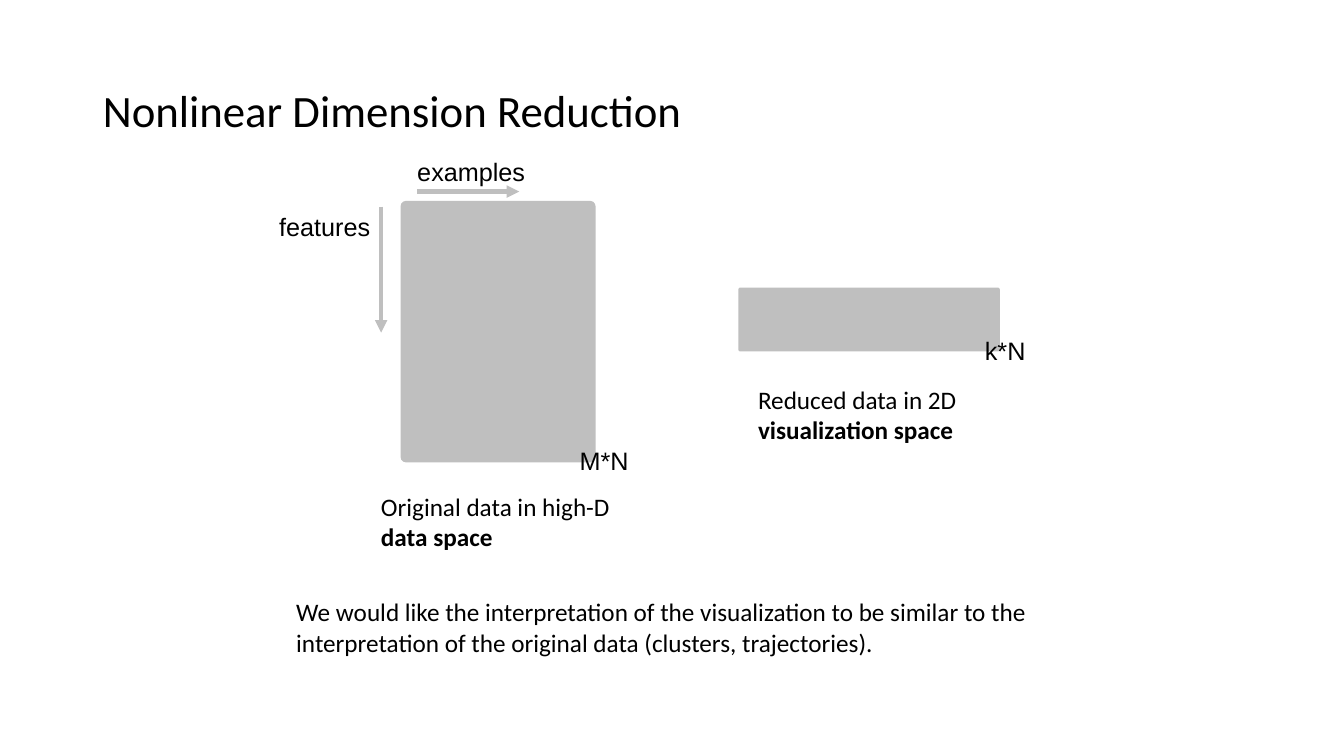
from lxml.etree import SubElement
from pptx import Presentation
from pptx.dml.color import RGBColor
from pptx.enum.shapes import MSO_CONNECTOR, MSO_SHAPE
from pptx.enum.text import MSO_ANCHOR, PP_ALIGN
from pptx.oxml.ns import qn
from pptx.util import Inches, Pt

COLORS = {"text": "000000", "matrix": "BFBFBF"}


def format_run(run, font_name, size, bold=False):
    run.font.name = font_name
    run.font.size = Pt(size)
    run.font.bold = bold
    run.font.color.rgb = RGBColor.from_string(COLORS["text"])


def add_label(left, top, width, height, text, font_name, bold_text="", wrap=True):
    label = slide.shapes.add_textbox(Inches(left), Inches(top), Inches(width), Inches(height))
    label.text_frame.word_wrap = wrap
    paragraph = label.text_frame.paragraphs[0]
    paragraph.text = text
    format_run(paragraph.runs[0], font_name, 18)
    if bold_text:
        emphasis = paragraph.add_run()
        emphasis.text = bold_text
        format_run(emphasis, font_name, 18, bold=True)


presentation = Presentation()
presentation.slide_width = Inches(13.33)
presentation.slide_height = Inches(7.5)
slide = presentation.slides.add_slide(presentation.slide_layouts[5])

title = slide.shapes.title
title.left, title.top = Inches(0.92), Inches(0.4)
title.width, title.height = Inches(11.5), Inches(1.45)
title.text_frame.text = "Nonlinear Dimension Reduction"
title.text_frame.vertical_anchor = MSO_ANCHOR.MIDDLE
heading = title.text_frame.paragraphs[0]
heading.alignment = PP_ALIGN.LEFT
heading.line_spacing = 0.9
format_run(heading.runs[0], "Calibri", 32)

matrix_color = RGBColor.from_string(COLORS["matrix"])
for left, top, width, height in [(3.98, 2, 1.92, 2.58), (7.33, 2.86, 2.58, 0.62)]:
    matrix = slide.shapes.add_shape(
        MSO_SHAPE.ROUNDED_RECTANGLE, Inches(left), Inches(top), Inches(width), Inches(height))
    matrix.adjustments[0] = 0.024
    matrix.shadow.inherit = False
    matrix.fill.solid()
    matrix.fill.fore_color.rgb = matrix_color
    matrix.line.color.rgb = matrix_color
    matrix.line.width = Pt(1)

for start_x, start_y, end_x, end_y in [(3.78, 2.05, 3.78, 3.3), (4.14, 1.9, 5.15, 1.9)]:
    axis = slide.shapes.add_connector(
        MSO_CONNECTOR.STRAIGHT, Inches(start_x), Inches(start_y), Inches(end_x), Inches(end_y))
    axis.line.color.rgb = matrix_color
    axis.line.width = Pt(3)
    SubElement(axis.line._get_or_add_ln(), qn("a:tailEnd"), type="triangle")
    SubElement(axis._element.spPr, qn("a:effectLst"))

add_label(2.67, 2.05, 1.11, 0.4, "features", "Arial", wrap=False)
add_label(4.04, 1.5, 1.36, 0.4, "examples", "Arial")
add_label(5.65, 4.37, 0.75, 0.4, "M*N", "Arial")
add_label(9.67, 3.28, 0.75, 0.4, "k*N", "Arial")
add_label(3.68, 4.82, 2.72, 0.71, "Original data in high-D ", "Calibri", "data space")
add_label(7.42, 3.76, 2.5, 0.71, "Reduced data in 2D ", "Calibri", "visualization space")
add_label(2.84, 5.87, 8.16, 0.71,
          "We would like the interpretation of the visualization to be similar to the "
          "interpretation of the original data (clusters, trajectories).", "Calibri")

presentation.save("out.pptx")
